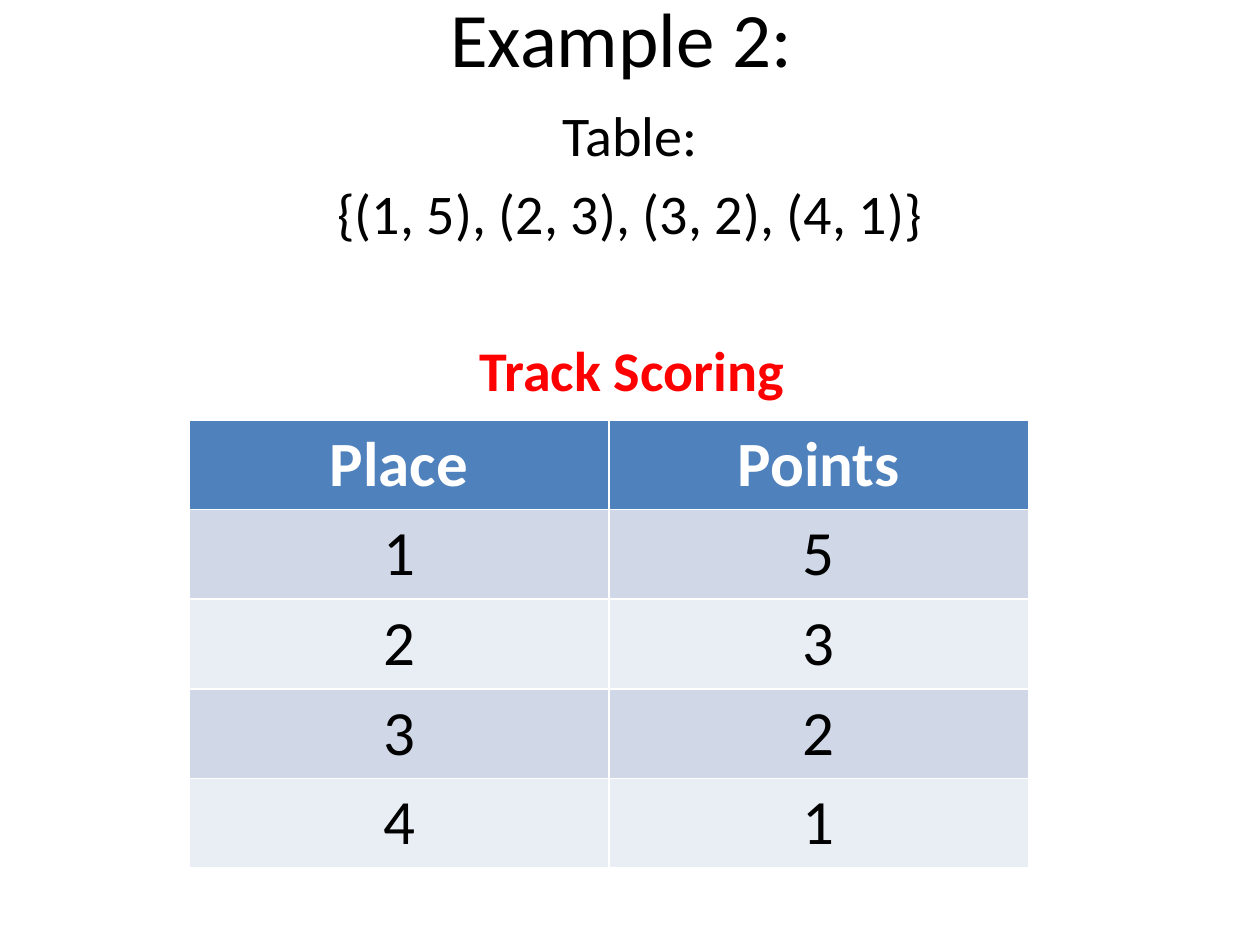
from pptx import Presentation
from pptx.dml.color import RGBColor
from pptx.enum.text import MSO_ANCHOR, PP_ALIGN
from pptx.util import Pt

FONT = "Calibri"
COLORS = {
    "text": "000000",
    "caption": "FF0000",
    "header_text": "FFFFFF",
    "header_fill": "4F81BD",
    "odd_row": "D0D8E8",
    "even_row": "E9EDF4",
}
SCORING = [("Place", "Points"), (1, 5), (2, 3), (3, 2), (4, 1)]


def format_paragraph(paragraph, size, color="text", bold=False, align=PP_ALIGN.CENTER):
    paragraph.alignment = align
    for run in paragraph.runs:
        run.font.name = FONT
        run.font.size = Pt(size)
        run.font.bold = bold
        run.font.color.rgb = RGBColor.from_string(COLORS[color])


def add_title(slide, text):
    title = slide.shapes.title
    title.left, title.top, title.width, title.height = Pt(36), Pt(-24), Pt(648), Pt(90)
    title.text_frame.text = text
    title.text_frame.vertical_anchor = MSO_ANCHOR.MIDDLE
    format_paragraph(title.text_frame.paragraphs[0], 44)


def add_relation(slide, pairs):
    relation = slide.shapes.add_textbox(Pt(0), Pt(54), Pt(720), Pt(356))
    frame = relation.text_frame
    frame.word_wrap = True
    frame.text = f"Table:\n{pairs}\nTrack Scoring"
    heading, pair_list, caption = frame.paragraphs
    format_paragraph(heading, 32)
    format_paragraph(pair_list, 32)
    pair_list.space_before = Pt(6.2)
    # The caption is indented to sit above the table
    format_paragraph(caption, 32, "caption", bold=True, align=PP_ALIGN.LEFT)
    caption.space_before = Pt(51)
    caption_properties = caption._p.get_or_add_pPr()
    caption_properties.set("marL", str(Pt(267)))
    caption_properties.set("indent", "0")


def add_scoring_table(slide, rows):
    row_height = 51.2
    table = slide.shapes.add_table(
        len(rows), len(rows[0]), Pt(108), Pt(240), Pt(480), Pt(row_height * len(rows))
    ).table
    for row_index, values in enumerate(rows):
        is_header = row_index == 0
        fill = "header_fill" if is_header else "odd_row" if row_index % 2 else "even_row"
        for column_index, value in enumerate(values):
            cell = table.cell(row_index, column_index)
            cell.fill.solid()
            cell.fill.fore_color.rgb = RGBColor.from_string(COLORS[fill])
            cell.text_frame.text = str(value)
            format_paragraph(
                cell.text_frame.paragraphs[0],
                36,
                "header_text" if is_header else "text",
                bold=is_header,
            )


def main():
    presentation = Presentation()
    presentation.slide_width, presentation.slide_height = Pt(720), Pt(540)
    slide = presentation.slides.add_slide(presentation.slide_layouts.get_by_name("Title Only"))
    add_title(slide, "Example 2: ")
    add_relation(slide, "{(1, 5), (2, 3), (3, 2), (4, 1)}")
    add_scoring_table(slide, SCORING)
    presentation.save("out.pptx")


if __name__ == "__main__":
    main()
